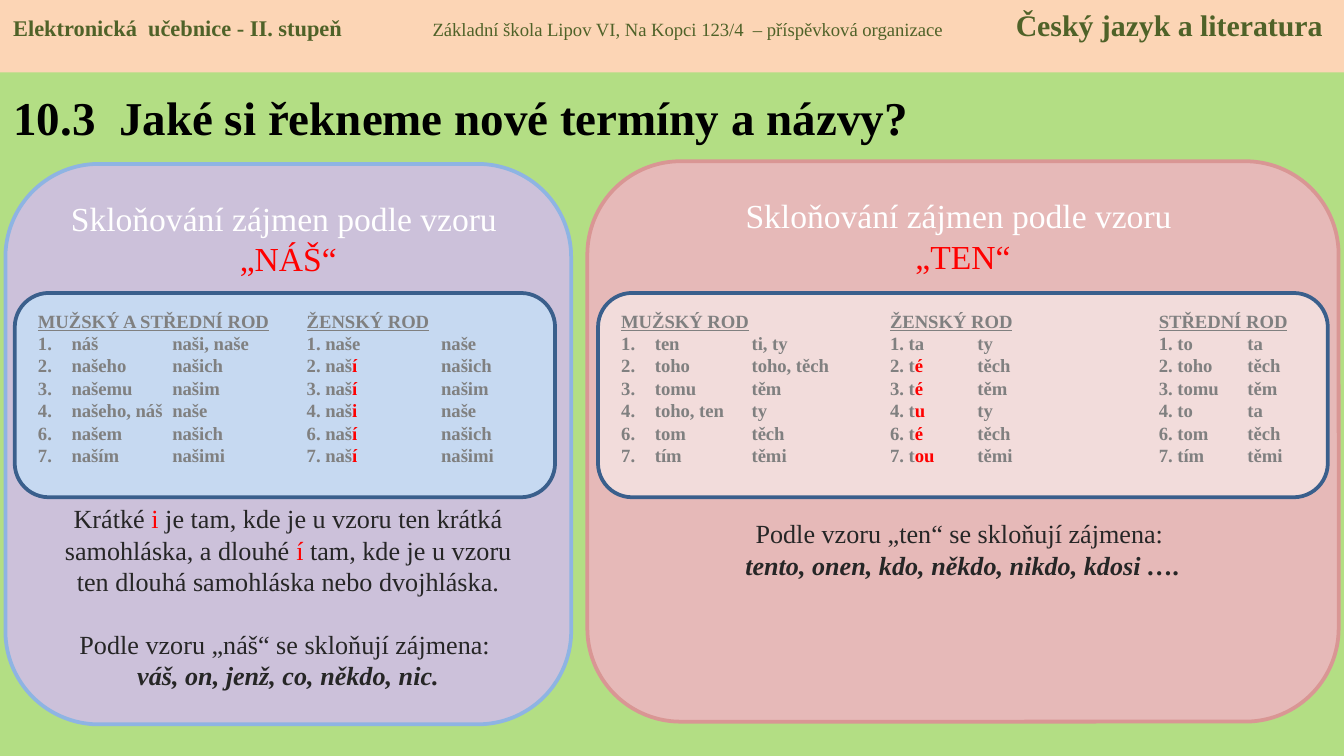
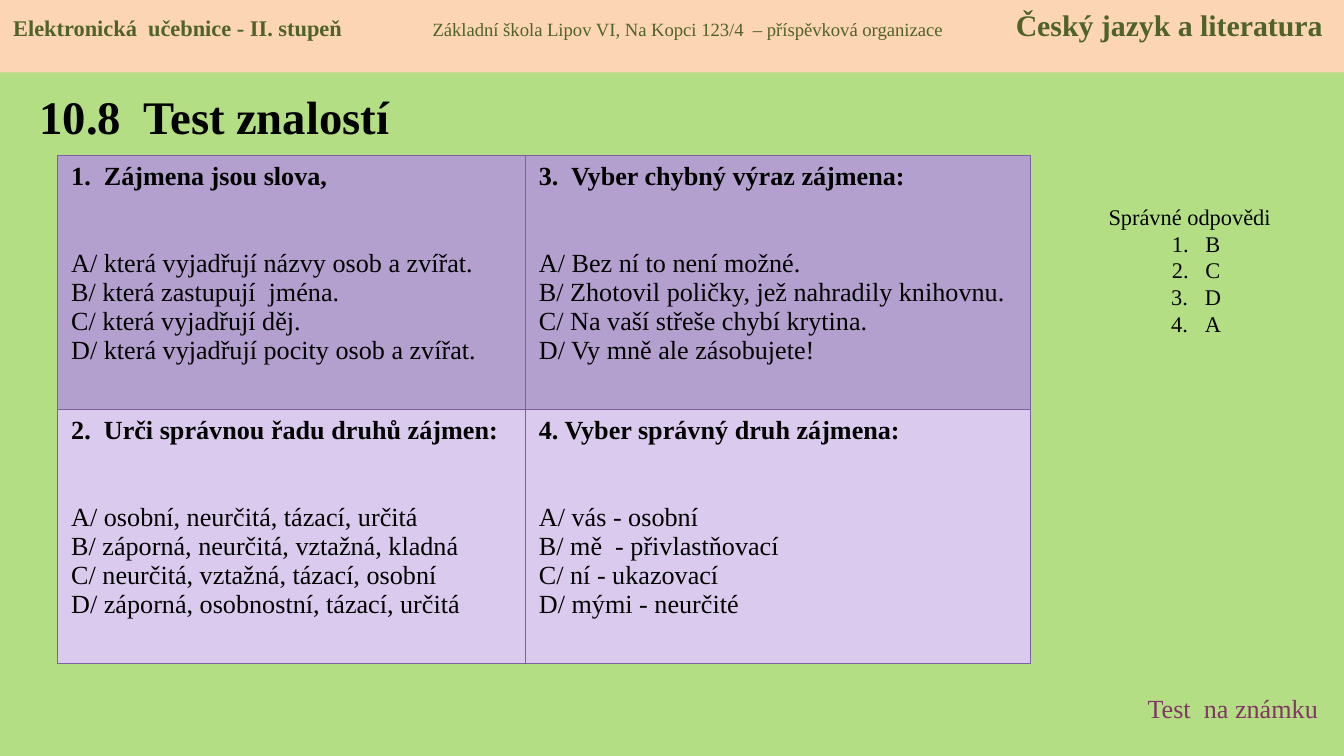
from dataclasses import dataclass

from lxml import etree
from pptx import Presentation, util as u
from pptx.dml.color import RGBColor
from pptx.enum import shapes, text
from pptx.oxml import ns


@dataclass(frozen=True)
class Theme:
    """Colours, font and type sizes of the deck."""
    font: str = "Times New Roman"
    page: str = "B3DE84"
    band: str = "FCD5B5"
    band_ink: str = "4F6228"
    ink: str = "000000"
    body_ink: str = "262626"
    grid_ink: str = "808080"
    white: str = "FFFFFF"
    red: str = "FF0000"
    link: str = "813763"
    grid_line: str = "3A5F8C"
    cell_line: str = "7D60A0"
    cell_rows: tuple = ("B3A0CE", "DACAED")
    title: float = 25.2
    short_title: float = 25
    subject: float = 16
    heading: float = 18
    body: float = 14
    small: float = 12
    tiny: float = 10
    leading: float = 1.2
    cell_leading: float = 1.11


T = Theme()
CENTER = text.PP_ALIGN.CENTER
LEFT = text.PP_ALIGN.LEFT
RED = {"color": T.red}


def marked(line, **accent):
    """Split a line at asterisks into runs, every second one accented."""
    return [(part, accent if i % 2 else {})
            for i, part in enumerate(line.split("*")) if part]


def set_font(font, size, color, bold=False, italic=False, underline=None):
    """Format a paragraph or run font."""
    font.name, font.size = T.font, u.Pt(size)
    font.bold, font.italic, font.underline = bold, italic, underline
    font.color.rgb = RGBColor.from_string(color)


def add_to_pPr(p, tag, followers, **attrs):
    """Insert a paragraph property in schema order."""
    el = etree.Element(ns.qn(tag), {k: str(v) for k, v in attrs.items()})
    p._p.get_or_add_pPr().insert_element_before(el, *followers)
    return el


def write(tf, runs, size, color, align=LEFT, before=0, leading=T.leading,
          start=None, stops=(), **style):
    """Add a paragraph of runs, optionally numbered or with tab stops."""
    p = tf.paragraphs[0]
    if p.runs:
        p = tf.add_paragraph()
    p.alignment = align
    p.line_spacing, p.space_before = u.Pt(size * leading), u.Pt(before)
    base = {"size": size, "color": color, **style}
    set_font(p.font, **base)
    for content, accent in runs:
        r = p.add_run()
        r.text = content
        set_font(r.font, **{**base, **accent})
    if start:
        hang = u.Inches(0.25)
        pPr = p._p.get_or_add_pPr()
        pPr.set("marL", str(hang))
        pPr.set("indent", str(-hang))
        add_to_pPr(p, "a:buAutoNum", ("a:tabLst", "a:defRPr"),
                   type="arabicPeriod", startAt=start)
    if stops:
        tabs = add_to_pPr(p, "a:tabLst", ("a:defRPr",))
        for stop in stops:
            etree.SubElement(tabs, ns.qn("a:tab"), pos=str(u.Inches(stop)), algn="l")
    return p


def add_box(s, box, kind=shapes.MSO_SHAPE.RECTANGLE, fill=None, line=None):
    """Add a filled preset shape and return its text frame."""
    sp = s.shapes.add_shape(kind, *map(u.Inches, box))
    sp.shadow.inherit = False
    sp.fill.solid()
    sp.fill.fore_color.rgb = RGBColor.from_string(fill)
    if line:
        sp.line.color.rgb = RGBColor.from_string(line)
        sp.line.width = u.Pt(2)
    else:
        sp.line.fill.background()
    tf = sp.text_frame
    tf.word_wrap, tf.vertical_anchor = True, text.MSO_ANCHOR.TOP
    return tf


def add_textbox(s, box):
    """Add a wrapping text box and return its text frame."""
    tf = s.shapes.add_textbox(*map(u.Inches, box)).text_frame
    tf.word_wrap = True
    return tf


def add_page(prs, title, width, size, align=LEFT):
    """Add a slide with background, title and header band."""
    s = prs.slides.add_slide(prs.slide_layouts[5])
    s.background.fill.solid()
    s.background.fill.fore_color.rgb = RGBColor.from_string(T.page)
    sp = s.shapes.title
    sp.left, sp.top, sp.width, sp.height = map(u.Inches, (0, 0.54, width, 0.65))
    tf = sp.text_frame
    tf.word_wrap, tf.auto_size = True, text.MSO_AUTO_SIZE.NONE
    tf.vertical_anchor = text.MSO_ANCHOR.MIDDLE
    write(tf, [(title, {})], size, T.ink, align, bold=True)
    add_band(s, (0, 0, 10, 0.54))
    return s


def add_band(s, box):
    """Add the header band with series, school and subject."""
    tf = add_box(s, box, fill=T.band)
    runs = [("Elektronická  učebnice - II. stupeň\t", {"size": T.small, "bold": True}),
            ("Základní škola Lipov VI, Na Kopci 123/4  – příspěvková organizace\t",
             {"size": T.tiny}),
            ("Český jazyk a literatura", {"bold": True})]
    write(tf, runs, T.subject, T.band_ink, stops=(3.12, 7.46))


def add_pattern_panel(s, box, fill, line, pattern, notes):
    """Add a rounded panel with a pattern heading and notes below its grid."""
    tf = add_box(s, box, shapes.MSO_SHAPE.ROUNDED_RECTANGLE, fill, line)
    write(tf, [("Skloňování zájmen podle vzoru ", {})], T.heading, T.white, CENTER)
    write(tf, [(pattern, {})], T.heading, T.red, CENTER)
    for note, before, emphasis in notes:
        write(tf, marked(note, **RED), T.body, T.body_ink, CENTER, before,
              bold=emphasis, italic=emphasis)


def add_case_grid(s, box, fill, header, header_stops, rows, stops):
    """Add a rounded box with numbered case forms in tabbed columns."""
    tf = add_box(s, box, shapes.MSO_SHAPE.ROUNDED_RECTANGLE, fill, T.grid_line)
    write(tf, marked(header, underline=True), T.tiny, T.grid_ink,
          stops=header_stops, bold=True)
    for i, row in enumerate(rows):
        write(tf, marked(row, **RED), T.tiny, T.grid_ink,
              start=1 if i < 4 else 6, stops=stops, bold=True)


def border_cell(cell):
    """Draw all four borders of a table cell."""
    tcPr = cell._tc.get_or_add_tcPr()
    for i, side in enumerate(("lnL", "lnR", "lnT", "lnB")):
        ln = etree.Element(ns.qn(f"a:{side}"), w=str(u.Pt(0.75)))
        fill = etree.SubElement(ln, ns.qn("a:solidFill"))
        etree.SubElement(fill, ns.qn("a:srgbClr"), val=T.cell_line)
        tcPr.insert(i, ln)


def add_quiz(s, box, col_widths, questions):
    """Add the question table, one question with its choices per cell."""
    tbl = s.shapes.add_table(len(questions), len(col_widths),
                             *map(u.Inches, box)).table
    tbl.first_row = tbl.horz_banding = False
    for col, width in zip(tbl.columns, col_widths):
        col.width = u.Inches(width)
    for i, row in enumerate(questions):
        tbl.rows[i].height = u.Inches(box[3] / len(questions))
        for j, (question, *choices) in enumerate(row):
            cell = tbl.cell(i, j)
            cell.fill.solid()
            cell.fill.fore_color.rgb = RGBColor.from_string(T.cell_rows[i])
            border_cell(cell)
            tf = cell.text_frame
            write(tf, [(question, {})], T.body, T.ink,
                  leading=T.cell_leading, bold=True)
            for k, choice in enumerate(choices):
                write(tf, [(f"{'ABCD'[k]}/ {choice}", {})], T.body, T.ink,
                      before=0 if k else 31, leading=T.cell_leading)


def add_answers(s, box, answers):
    """Add the numbered list of correct answers."""
    tf = add_textbox(s, box)
    write(tf, [("Správné odpovědi", {})], T.small, T.ink)
    for answer in answers:
        write(tf, [(answer, {})], T.small, T.ink, CENTER, start=1)


def build_patterns(prs):
    """Build the slide on the two declension patterns."""
    s = add_page(prs, "10.3  Jaké si řekneme nové termíny a názvy?", 7.42, T.title)
    add_pattern_panel(s, (0.04, 1.22, 4.21, 4.17), "CCC1DA", "8EB4E3", "„NÁŠ“", [
        ("Krátké *i* je tam, kde je u vzoru ten krátká samohláska, a dlouhé *í* tam, "
         "kde je u vzoru ten dlouhá samohláska nebo dvojhláska.", 120, False),
        ("Podle vzoru „náš“ se skloňují zájmena: ", 16.8, False),
        ("váš, on, jenž, co, někdo, nic.", 0, True)])
    add_pattern_panel(s, (4.37, 1.2, 5.59, 4.17), "E6B9B8", "D99694", "„TEN“", [
        ("Podle vzoru „ten“ se skloňují zájmena: ", 129.6, False),
        ("tento, onen, kdo, někdo, nikdo, kdosi ….", 0, True)])
    add_case_grid(s, (0.11, 2.18, 4.02, 1.52), "C6D9F1",
                  "*MUŽSKÝ A STŘEDNÍ ROD*\t*ŽENSKÝ ROD*", (2,), [
                      "náš\tnaši, naše\t1. naše\tnaše",
                      "našeho\tnašich\t2. naš*í*\tnašich",
                      "našemu\tnašim\t3. naš*í*\tnašim",
                      "našeho, náš\tnaše\t4. naš*i*\tnaše",
                      "našem\tnašich\t6. naš*í*\tnašich",
                      "naším\tnašimi\t7. naš*í*\tnašimi"], (1, 2, 3))
    add_case_grid(s, (4.45, 2.18, 5.43, 1.52), "F2DCDB",
                  "*MUŽSKÝ ROD*\t*ŽENSKÝ ROD*\t*STŘEDNÍ ROD*", (2, 4), [
                      "ten\tti, ty\t1. ta\tty\t1. to\tta",
                      "toho\ttoho, těch\t2. t*é*\ttěch\t2. toho\ttěch",
                      "tomu\ttěm\t3. t*é*\ttěm\t3. tomu\ttěm",
                      "toho, ten\tty\t4. t*u*\tty\t4. to\tta",
                      "tom\ttěch\t6. t*é*\ttěch\t6. tom\ttěch",
                      "tím\ttěmi\t7. t*ou*\ttěmi\t7. tím\ttěmi"],
                  (0.97, 2, 2.65, 4, 4.66))


def build_test(prs):
    """Build the slide with the knowledge test."""
    s = add_page(prs, "10.8  Test znalostí", 3.19, T.short_title, CENTER)
    add_quiz(s, (0.43, 1.16, 7.24, 3.78), (3.48, 3.76), [
        [("1.  Zájmena jsou slova,", "která vyjadřují názvy osob a zvířat.",
          "která zastupují  jména.", "která vyjadřují děj.",
          "která vyjadřují pocity osob a zvířat."),
         ("3.  Vyber chybný výraz zájmena:", "Bez ní to není možné.",
          "Zhotovil poličky, jež nahradily knihovnu.",
          "Na vaší střeše chybí krytina.", "Vy mně ale zásobujete!")],
        [("2.  Urči správnou řadu druhů zájmen:", "osobní, neurčitá, tázací, určitá",
          "záporná, neurčitá, vztažná, kladná", "neurčitá, vztažná, tázací, osobní",
          "záporná, osobnostní, tázací, určitá"),
         ("4. Vyber správný druh zájmena:", "vás - osobní", "mě  - přivlastňovací",
          "ní - ukazovací", "mými - neurčité")]])
    add_answers(s, (8.15, 1.46, 1.5, 1.11), "BCDA")
    write(add_textbox(s, (8.44, 5.1, 1.57, 0.34)), [("Test  na známku", {})],
          T.body, T.link)


def main():
    """Build and save the deck."""
    prs = Presentation()
    prs.slide_width, prs.slide_height = u.Inches(10), u.Inches(10 * 9 / 16)
    build_patterns(prs)
    build_test(prs)
    prs.save("out.pptx")


if __name__ == "__main__":
    main()
